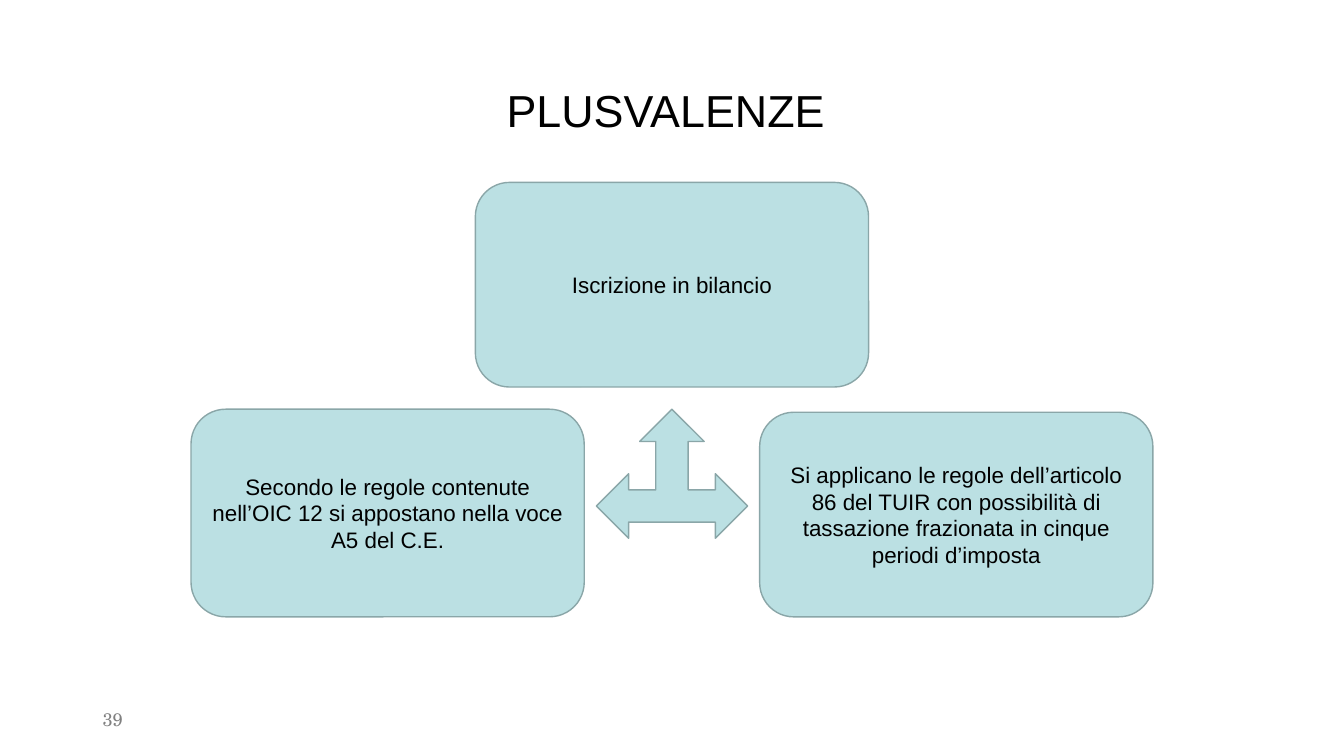
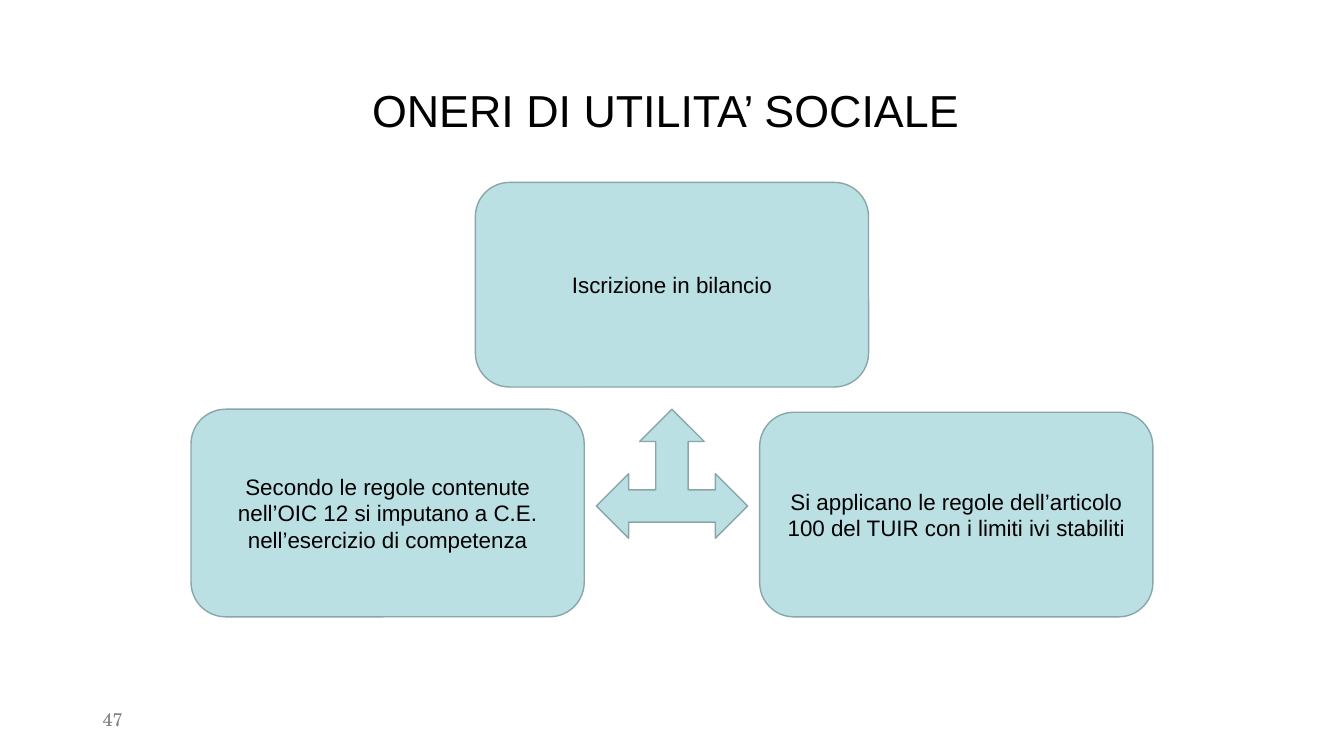
from dataclasses import dataclass

import pptx
import pptx.dml.color
import pptx.enum.shapes
import pptx.enum.text
import pptx.util

SHAPE = pptx.enum.shapes.MSO_SHAPE
ALIGN = pptx.enum.text.PP_ALIGN
MIDDLE = pptx.enum.text.MSO_ANCHOR.MIDDLE
Inches = pptx.util.Inches


@dataclass(frozen=True)
class Theme:
    font: str = "Arial"
    number_font: str = "TeX Gyre Schola"
    ink: str = "000000"
    grey: str = "808080"
    fill: str = "BBE0E3"
    line: str = "8AA6A8"
    title_pt: int = 32
    body_pt: int = 16
    number_pt: int = 13
    line_pt: int = 1


@dataclass(frozen=True)
class Part:
    """A shape centred on a grid column: -1 left, 0 middle, 1 right."""
    kind: int
    column: int
    top: float
    width: float
    height: float


@dataclass(frozen=True)
class Page:
    title: str
    number: int
    accounting: str
    taxation: str


THEME = Theme()

# Grid, in inches
SLIDE_W, SLIDE_H = 13.33, 7.5
MARGIN = 0.92
COLUMN_STEP = 2.82
BOX_W, BOX_H = 3.9, 2.03
LOWER_TOP, LOWER_BOTTOM = 4.06, 6.12

TOP_BOX = Part(SHAPE.ROUNDED_RECTANGLE, 0, 1.81, BOX_W, BOX_H)
ARROW = Part(SHAPE.LEFT_RIGHT_UP_ARROW, 0, LOWER_TOP, 1.5, 1.28)
LEFT_BOX = Part(SHAPE.ROUNDED_RECTANGLE, -1, LOWER_TOP, BOX_W, LOWER_BOTTOM - LOWER_TOP)
RIGHT_BOX = Part(SHAPE.ROUNDED_RECTANGLE, 1, LOWER_BOTTOM - BOX_H, BOX_W, BOX_H)

PAGES = [
    Page(
        "PLUSVALENZE ", 39,
        "Secondo le regole contenute nell’OIC 12 si appostano nella voce A5 del C.E.",
        "Si applicano le regole dell’articolo 86 del TUIR con possibilità di "
        "tassazione frazionata in cinque periodi d’imposta",
    ),
    Page(
        "ONERI DI UTILITA’ SOCIALE ", 47,
        "Secondo le regole contenute nell’OIC 12 si imputano a C.E. "
        "nell’esercizio di competenza",
        "Si applicano le regole dell’articolo 100 del TUIR con i limiti ivi stabiliti",
    ),
]


def rgb(value: str) -> pptx.dml.color.RGBColor:
    return pptx.dml.color.RGBColor.from_string(value)


def set_text(sp, text: str, *, size: int = THEME.body_pt, font: str = THEME.font,
             color: str = THEME.ink, align=ALIGN.CENTER, spacing: float = 1.0) -> None:
    """Write one formatted paragraph into a shape or placeholder."""
    tf = sp.text_frame
    tf.word_wrap = True
    tf.auto_size = pptx.enum.text.MSO_AUTO_SIZE.NONE
    tf.vertical_anchor = MIDDLE
    p = tf.paragraphs[0]
    p.alignment = align
    p.line_spacing = spacing
    r = p.add_run()
    r.text = text
    r.font.size = pptx.util.Pt(size)
    r.font.name = font
    r.font.color.rgb = rgb(color)


def add_part(s, part: Part, text: str = "") -> None:
    """Draw a tinted shape on its grid column."""
    left = SLIDE_W / 2 + part.column * COLUMN_STEP - part.width / 2
    sp = s.shapes.add_shape(part.kind, Inches(left), Inches(part.top),
                            Inches(part.width), Inches(part.height))
    sp.shadow.inherit = False
    sp.fill.solid()
    sp.fill.fore_color.rgb = rgb(THEME.fill)
    sp.line.color.rgb = rgb(THEME.line)
    sp.line.width = pptx.util.Pt(THEME.line_pt)
    if text:
        set_text(sp, text)


def add_frame(s, page: Page) -> None:
    """Fill in the title and the page number."""
    title = s.shapes.title
    title.left, title.top = Inches(MARGIN), Inches(0.4)
    title.width, title.height = Inches(SLIDE_W - 2 * MARGIN), Inches(1.45)
    set_text(title, page.title, size=THEME.title_pt, spacing=0.9)

    number = s.shapes.add_textbox(Inches(MARGIN), Inches(6.95), Inches(3), Inches(0.4))
    set_text(number, str(page.number), size=THEME.number_pt, font=THEME.number_font,
             color=THEME.grey, align=ALIGN.LEFT, spacing=0.93)


def add_page(prs, page: Page) -> None:
    s = prs.slides.add_slide(prs.slide_layouts.get_by_name("Title Only"))
    add_frame(s, page)
    # Heading box, arrow and the two rules it leads to
    add_part(s, TOP_BOX, "Iscrizione in bilancio")
    add_part(s, ARROW)
    add_part(s, LEFT_BOX, page.accounting)
    add_part(s, RIGHT_BOX, page.taxation)


def main() -> None:
    prs = pptx.Presentation()
    prs.slide_width, prs.slide_height = Inches(SLIDE_W), Inches(SLIDE_H)
    for page in PAGES:
        add_page(prs, page)
    prs.save("out.pptx")


if __name__ == "__main__":
    main()
